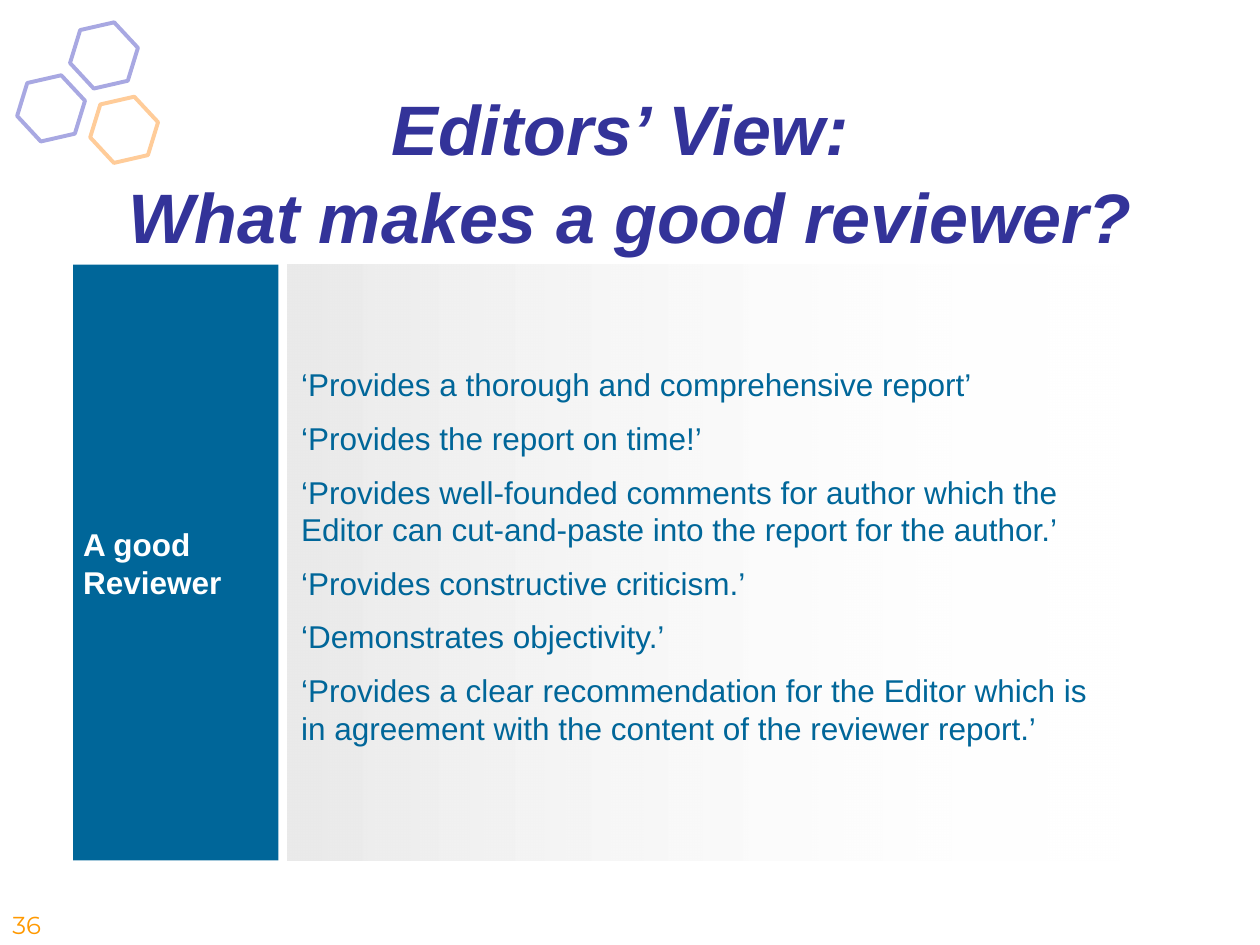
from dataclasses import dataclass

from lxml.etree import SubElement
from pptx import Presentation
from pptx.dml.color import RGBColor
from pptx.enum.shapes import MSO_SHAPE
from pptx.enum.text import MSO_ANCHOR, PP_ALIGN
from pptx.oxml.ns import qn
from pptx.util import Inches, Pt


@dataclass(frozen=True)
class Theme:
    font: str = "Arial"
    number_font: str = "Montserrat"
    title: str = "333399"
    accent: str = "006699"
    light: str = "FFFFFF"
    shade: str = "EAEAEA"
    number: str = "FF9900"
    lilac: str = "A8A8E2"
    peach: str = "FFCC99"
    title_size: int = 40
    body_size: int = 18
    number_size: int = 14


THEME = Theme()

QUALITIES = [
    "‘Provides a thorough and comprehensive report’",
    "‘Provides the report on time!’",
    "‘Provides well-founded comments for author which the Editor can "
    "cut-and-paste into the report for the author.’",
    "‘Provides constructive criticism.’",
    "‘Demonstrates objectivity.’",
    "‘Provides a clear recommendation for the Editor which is in agreement "
    "with the content of the reviewer report.’",
]


def apply(target, values):
    for name, value in values.items():
        setattr(target, name, value)


def inches(*lengths):
    return [Inches(length) for length in lengths]


def write(shape, lines, size, color, font=THEME.font, bold=False, italic=False,
          frame_format=None, paragraph_format=None, gap=0):
    frame = shape.text_frame
    apply(frame, {"word_wrap": True, **(frame_format or {})})
    for index, line in enumerate(lines):
        paragraph = frame.paragraphs[0] if index == 0 else frame.add_paragraph()
        paragraph.text = line
        apply(paragraph, {"alignment": PP_ALIGN.LEFT,
                          "space_before": Pt(gap if index else 0),
                          **(paragraph_format or {})})
        apply(paragraph.font, {"name": font, "size": Pt(size),
                               "bold": bold, "italic": italic})
        paragraph.font.color.rgb = RGBColor.from_string(color)


def margins(length):
    sides = ("margin_left", "margin_top", "margin_right", "margin_bottom")
    return {side: Inches(length) for side in sides}


def add_hexagon(slide, left, top, color):
    hexagon = slide.shapes.add_shape(MSO_SHAPE.HEXAGON, *inches(left, top, 0.55, 0.48))
    hexagon.adjustments[0] = 0.288
    hexagon.rotation = 107.1
    hexagon.shadow.inherit = False
    hexagon.fill.background()
    hexagon.line.color.rgb = RGBColor.from_string(color)
    hexagon.line.width = Pt(2.25)


def add_panel(slide, left, width):
    panel = slide.shapes.add_shape(MSO_SHAPE.RECTANGLE, *inches(left, 2.1, width, 4.73))
    panel.shadow.inherit = False
    panel.line.fill.background()
    return panel


def fade_out(panel, start, end):
    panel.fill.gradient()
    panel.fill.gradient_angle = 0
    stops = panel.fill.gradient_stops
    for stop, color, position in zip(stops, (start, end), (0, 1)):
        stop.color.rgb = RGBColor.from_string(color)
        stop.position = position
    end_color = list(panel.fill._xPr.iter(qn("a:srgbClr")))[-1]
    SubElement(end_color, qn("a:alpha"), val="0")


def add_text(slide, box, lines, size, color, **options):
    write(slide.shapes.add_textbox(*inches(*box)), lines, size, color, **options)


def main():
    deck = Presentation()
    apply(deck, {"slide_width": Inches(10), "slide_height": Inches(7.5)})
    slide = deck.slides.add_slide(deck.slide_layouts[6])

    for left, top, color in [(0.55, 0.2, THEME.lilac), (0.13, 0.62, THEME.lilac),
                             (0.71, 0.79, THEME.peach)]:
        add_hexagon(slide, left, top, color)

    add_text(slide, (0.5, 0.91, 9, 0.87),
             ["Editors’ View: \vWhat makes a good reviewer?"],
             THEME.title_size, THEME.title, bold=True, italic=True,
             frame_format={"vertical_anchor": MSO_ANCHOR.MIDDLE},
             paragraph_format={"alignment": PP_ALIGN.CENTER, "line_spacing": 1.05})
    add_text(slide, (0, 7.17, 0.67, 0.33), ["36"], THEME.number_size, THEME.number,
             font=THEME.number_font)

    label = add_panel(slide, 0.58, 1.63)
    label.fill.solid()
    label.fill.fore_color.rgb = RGBColor.from_string(THEME.accent)
    write(label, ["A good Reviewer"], THEME.body_size, THEME.light, bold=True,
          frame_format={"vertical_anchor": MSO_ANCHOR.MIDDLE, **margins(0.08)})

    fade_out(add_panel(slide, 2.28, 6.64), THEME.shade, THEME.light)
    add_text(slide, (2.39, 2.9, 6.39, 3.06), QUALITIES, THEME.body_size, THEME.accent,
             frame_format=margins(0), gap=THEME.body_size / 2)

    deck.save("out.pptx")


if __name__ == "__main__":
    main()
